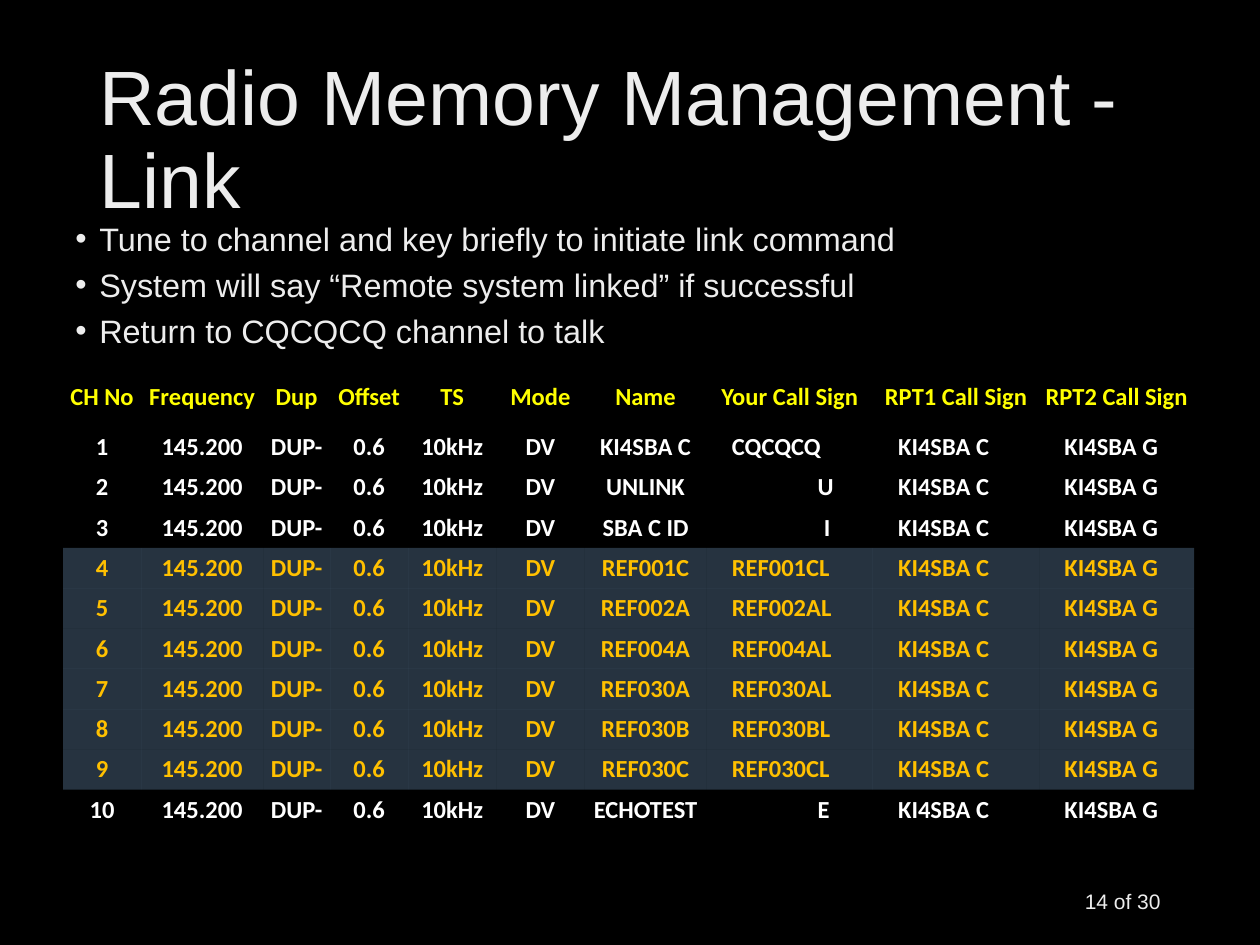
from pptx import Presentation
from pptx.dml.color import RGBColor
from pptx.enum.text import MSO_ANCHOR as Anchor, PP_ALIGN as Align
from pptx.oxml.ns import qn
from pptx.util import Inches, Pt
from lxml import etree

COLORS = {"background": "000000", "text": "EDEDED", "header": "FFFF00",
          "plain": "FFFFFF", "link": "FFC000", "band": "99CCFF"}
TITLE = "Radio Memory Management - Link"
BULLETS = [
    "Tune to channel and key briefly to initiate link command",
    "System will say “Remote system linked” if successful",
    "Return to CQCQCQ channel to talk",
]
PAGE = "14 of 30"
HEADERS = ["CH No", "Frequency", "Dup", "Offset", "TS", "Mode", "Name",
           "Your Call Sign", "RPT1 Call Sign", "RPT2 Call Sign"]
CHANNELS = [
    ("KI4SBA C", "CQCQCQ"), ("UNLINK", "U"), ("SBA C ID", "I"),
    ("REF001C", "REF001CL"), ("REF002A", "REF002AL"), ("REF004A", "REF004AL"),
    ("REF030A", "REF030AL"), ("REF030B", "REF030BL"), ("REF030C", "REF030CL"),
    ("ECHOTEST", "E"),
]
RADIO = ["145.200", "DUP-", "0.6", "10kHz", "DV"]
REPEATERS = ["KI4SBA C", "KI4SBA G"]
COMMAND_INDENT = {"U": 0.88, "I": 0.93, "E": 0.88}
COL_WIDTHS = [0.62, 0.97, 0.53, 0.62, 0.7, 0.7, 0.97, 1.32, 1.32, 1.23]
HEADER_HEIGHT, ROW_HEIGHT = 0.47, 0.32
FIRST_SIGN_COL = 7
NO_STYLE = "{2D5ABB26-0587-4C30-8999-92F81FD0307C}"


def rgb(name):
    return RGBColor.from_string(COLORS[name])


def write(tf, lines, size, color="text", font="Arial", bold=False,
          align=Align.LEFT, spacing=None, before=0, bullet=None):
    for i, line in enumerate(lines):
        p = tf.paragraphs[0] if i == 0 else tf.add_paragraph()
        p.alignment = align
        if spacing:
            p.line_spacing = spacing
        if i and before:
            p.space_before = Pt(before)
        if bullet:
            pPr = p._p.get_or_add_pPr()
            pPr.set("marL", str(Inches(0.19)))
            pPr.set("indent", str(-Inches(0.19)))
            etree.SubElement(pPr, qn("a:buFont"), typeface="Arial")
            etree.SubElement(pPr, qn("a:buChar"), char=bullet)
        r = p.add_run()
        r.text = line
        r.font.name, r.font.size, r.font.bold = font, Pt(size), bold
        r.font.color.rgb = rgb(color)


def add_text(slide, box, lines, size, anchor=Anchor.TOP, **style):
    tf = slide.shapes.add_textbox(*map(Inches, box)).text_frame
    tf.word_wrap = True
    tf.vertical_anchor = anchor
    write(tf, lines, size, **style)


def fill_cell(cell, text, color, indent=0.0, align=Align.CENTER):
    cell.margin_left = Inches(indent)
    cell.margin_right = cell.margin_top = cell.margin_bottom = 0
    cell.vertical_anchor = Anchor.MIDDLE
    write(cell.text_frame, [text], 14, color=color, font="Calibri",
          bold=True, align=align)
    if color == "link":
        cell.fill.solid()
        cell.fill.fore_color.rgb = rgb("band")
        srgb = cell._tc.tcPr.find(".//" + qn("a:srgbClr"))
        etree.SubElement(srgb, qn("a:alpha"), val="25000")
    else:
        cell.fill.background()


def add_channels(slide):
    height = HEADER_HEIGHT + ROW_HEIGHT * len(CHANNELS)
    table = slide.shapes.add_table(
        len(CHANNELS) + 1, len(HEADERS), Inches(0.5), Inches(2.92),
        Inches(sum(COL_WIDTHS)), Inches(height)).table
    table.first_row = table.horz_banding = False
    table._tbl.find(".//" + qn("a:tableStyleId")).text = NO_STYLE
    for col, width in zip(table.columns, COL_WIDTHS):
        col.width = Inches(width)
    for i, row in enumerate(table.rows):
        row.height = Inches(ROW_HEIGHT if i else HEADER_HEIGHT)
    for c, header in enumerate(HEADERS):
        fill_cell(table.cell(0, c), header, "header")
    for n, (name, sign) in enumerate(CHANNELS, 1):
        color = "link" if name.startswith("REF") else "plain"
        for c, text in enumerate([str(n), *RADIO, name, sign, *REPEATERS]):
            cell = table.cell(n, c)
            if c < FIRST_SIGN_COL:
                fill_cell(cell, text, color)
            else:
                fill_cell(cell, text, color, align=Align.LEFT,
                          indent=COMMAND_INDENT.get(text, 0.2))


def main():
    prs = Presentation()
    prs.slide_width, prs.slide_height = Inches(10), Inches(7.5)
    s = prs.slides.add_slide(prs.slide_layouts[6])
    s.background.fill.solid()
    s.background.fill.fore_color.rgb = rgb("background")
    add_text(s, (0.69, 0.4, 8.62, 1.45), [TITLE], 44,
             anchor=Anchor.MIDDLE, spacing=0.9)
    add_text(s, (0.5, 1.75, 9, 1.08), BULLETS, 18.5,
             spacing=0.8, before=8.4, bullet="•")
    add_channels(s)
    add_text(s, (7.06, 6.95, 2.25, 0.4), [PAGE], 12,
             anchor=Anchor.MIDDLE, align=Align.RIGHT)
    prs.save("out.pptx")


if __name__ == "__main__":
    main()
